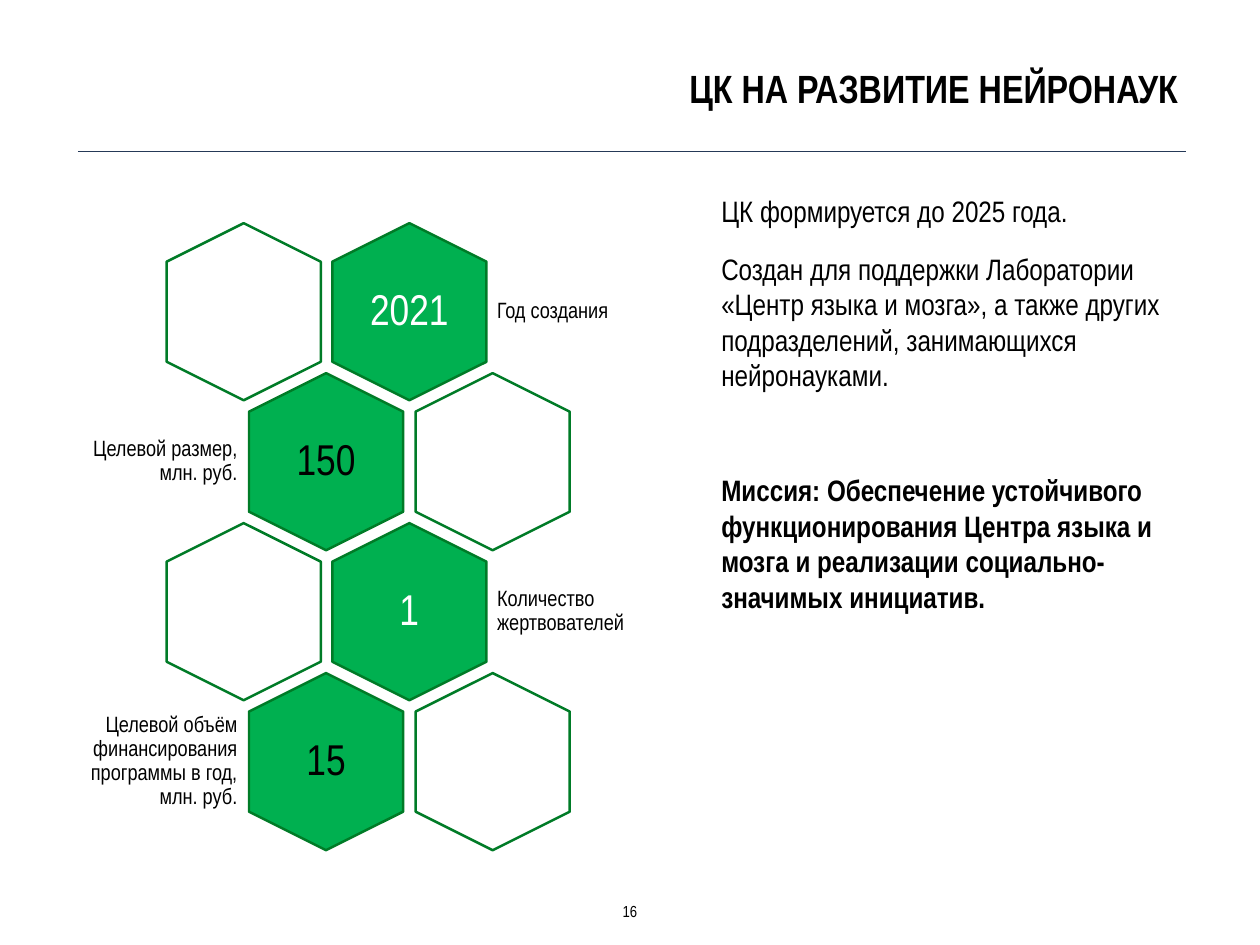
from pptx import Presentation
from pptx.dml.color import RGBColor
from pptx.enum.shapes import MSO_CONNECTOR, MSO_SHAPE
from pptx.enum.text import MSO_ANCHOR, MSO_AUTO_SIZE, PP_ALIGN
from pptx.oxml.ns import qn
from pptx.util import Inches, Pt

LEFT, CENTER, RIGHT = PP_ALIGN.LEFT, PP_ALIGN.CENTER, PP_ALIGN.RIGHT
TOP, MIDDLE = MSO_ANCHOR.TOP, MSO_ANCHOR.MIDDLE

FONT = "Arial Narrow"
COLORS = {"text": "000000", "white": "FFFFFF", "fill": "00B050",
          "outline": "007B27", "rule": "253957"}
HEX_WIDTH, HEX_HEIGHT = 2, 1.74
VALUE_WIDTH, VALUE_HEIGHT = 1.2, 1.37
LABEL_HEIGHT = 1.2
FIRST_ROW_TOP, LAST_ROW_TOP = 2.65, 7.73


def color(name):
    return RGBColor.from_string(COLORS[name])


def write_text(shape, box, lines, size, align=LEFT, anchor=TOP, inset=0.06,
               font_color="text", bold=False, spacing=1.0):
    """Place a text shape at box (left, top, width, height) and fill it."""
    shape.left, shape.top, shape.width, shape.height = map(Inches, box)
    frame = shape.text_frame
    frame.text = "\n".join(lines)
    frame.word_wrap = True
    frame.auto_size = MSO_AUTO_SIZE.NONE
    frame.vertical_anchor = anchor
    frame.margin_left = frame.margin_right = Inches(inset)
    frame.margin_top = frame.margin_bottom = Inches(inset)
    for paragraph in frame.paragraphs:
        paragraph.alignment = align
        paragraph.line_spacing = spacing
        paragraph.space_before = Pt(0)
        for run in paragraph.runs:
            run.font.name = FONT
            run.font.size = Pt(size)
            run.font.bold = bold
            run.font.color.rgb = color(font_color)


presentation = Presentation()
presentation.slide_width = Inches(14.22)
presentation.slide_height = Inches(10.67)
slide = presentation.slides.add_slide(presentation.slide_layouts[1])
shapes = slide.shapes

# Header
rule = shapes.add_connector(MSO_CONNECTOR.STRAIGHT, Inches(0.88), Inches(1.71),
                            Inches(13.38), Inches(1.71))
rule.line.color.rgb = color("rule")
rule.line.width = Pt(1)
rule_properties = rule._element.spPr
rule_properties.append(rule_properties.makeelement(qn("a:effectLst"), {}))
write_text(shapes.title, (0.43, 0.66, 12.93, 1.03), ["ЦК НА РАЗВИТИЕ НЕЙРОНАУК"],
           32, align=RIGHT, bold=True)

# Description and mission
description = slide.placeholders[1]
write_text(description, (8.04, 2.13, 5.34, 4.9), [
    "ЦК формируется до 2025 года.",
    "Создан для поддержки Лаборатории «Центр языка и мозга», а также других "
    "подразделений, занимающихся нейронауками.",
    "Миссия: Обеспечение устойчивого функционирования Центра языка и мозга "
    "и реализации социально-значимых инициатив.",
], 24, inset=0.1)
description.text_frame.margin_top = Inches(0.05)
paragraphs = description.text_frame.paragraphs
for paragraph, gap in zip(paragraphs, (0, 18, 65)):
    paragraph.space_before = Pt(gap)
    properties = paragraph._p.get_or_add_pPr()
    properties.set("marL", "0")
    properties.set("indent", "0")
    properties.append(properties.makeelement(qn("a:buNone"), {}))
paragraphs[-1].runs[0].font.bold = True

# Honeycomb: rows alternate between a label on the right and on the left
indicators = [
    ("2021", "Год создания"),
    ("150", "Целевой размер, млн. руб."),
    ("1", "Количество жертвователей"),
    ("15", "Целевой объём финансирования программы в год, млн. руб."),
]
# filled left, empty left, label left, label width, label alignment, value colour
row_styles = [
    (3.62, 1.75, 5.54, 2.23, LEFT, "white"),
    (2.68, 4.56, 0.59, 2.16, RIGHT, "text"),
]
row_step = (LAST_ROW_TOP - FIRST_ROW_TOP) / (len(indicators) - 1)
for row, (value, label) in enumerate(indicators):
    filled_left, empty_left, label_left, label_width, align, value_color = row_styles[row % 2]
    top = FIRST_ROW_TOP + row * row_step
    middle = top + HEX_HEIGHT / 2
    for left, fill in ((filled_left, "fill"), (empty_left, "white")):
        hexagon = shapes.add_shape(MSO_SHAPE.HEXAGON, Inches(left), Inches(top),
                                   Inches(HEX_WIDTH), Inches(HEX_HEIGHT))
        hexagon.rotation = 90
        hexagon.adjustments[0] = 0.25
        hexagon.shadow.inherit = False
        hexagon.fill.solid()
        hexagon.fill.fore_color.rgb = color(fill)
        hexagon.line.color.rgb = color("outline")
        hexagon.line.width = Pt(2)
    value_box = (filled_left + (HEX_WIDTH - VALUE_WIDTH) / 2, middle - VALUE_HEIGHT / 2,
                 VALUE_WIDTH, VALUE_HEIGHT)
    write_text(shapes.add_textbox(0, 0, 0, 0), value_box, [value], 35, CENTER, MIDDLE,
               0.15, value_color, spacing=0.9)
    label_box = (label_left, middle - LABEL_HEIGHT / 2, label_width, LABEL_HEIGHT)
    write_text(shapes.add_textbox(0, 0, 0, 0), label_box, [label], 18, align, MIDDLE,
               0.07, spacing=0.9)

# Page number
write_text(shapes.add_textbox(0, 0, 0, 0), (6.95, 10.12, 0.32, 0.33), ["16"], 13, CENTER)

presentation.save("out.pptx")
